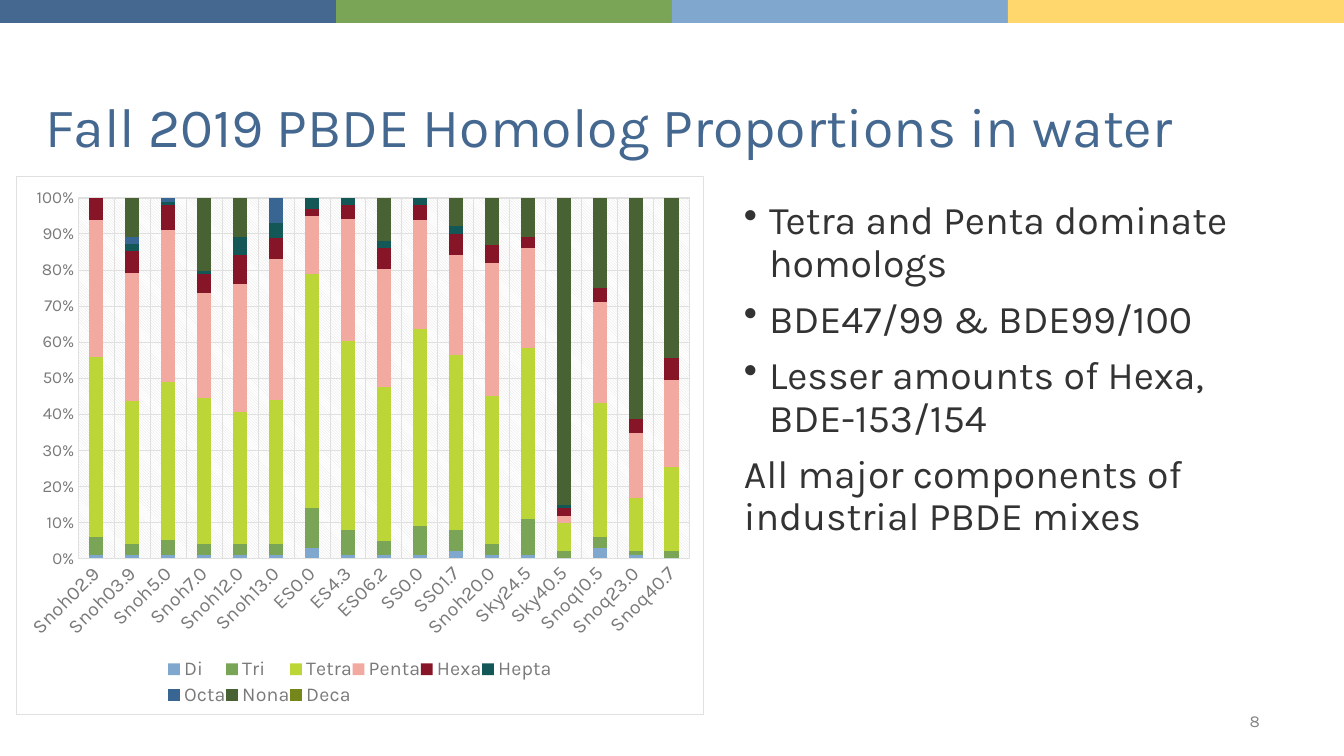
import dataclasses

import pptx
import pptx.chart.data
import pptx.dml.color
import pptx.enum.chart
import pptx.enum.shapes
import pptx.enum.text
import pptx.oxml
import pptx.oxml.ns
import pptx.util
from lxml import etree


@dataclasses.dataclass(frozen=True)
class Theme:
    font: str = "Karla"
    navy: str = "44688F"
    green: str = "7AA456"
    sky: str = "80A8CE"
    yellow: str = "FFD76D"
    white: str = "FFFFFF"
    text: str = "333333"
    axis: str = "7A7A7A"
    number: str = "858585"
    grid: str = "E0E0E0"
    title_size: float = 39.6
    body_size: int = 28
    label_size: int = 14
    small_size: int = 12


THEME = Theme()
EMU_PER_PX = 914400 / 100.8
WIDTH, HEIGHT = 1344, 756
ALIGN = pptx.enum.text.PP_ALIGN
ANCHOR = pptx.enum.text.MSO_ANCHOR

SITES = ["Snoh02.9", "Snoh03.9", "Snoh5.0", "Snoh7.0", "Snoh12.0", "Snoh13.0",
         "ES0.0", "ES4.3", "ES06.2", "SS0.0", "SS01.7", "Snoh20.0", "Sky24.5",
         "Sky40.5", "Snoq10.5", "Snoq23.0", "Snoq40.7"]
HOMOLOGS = [
    ("Di", THEME.sky, [1, 1, 1, 1, 1, 1, 3, 1, 1, 1, 2, 1, 1, 0, 3, 1, 0]),
    ("Tri", THEME.green, [5, 3, 4, 3, 3, 3, 11, 7, 4, 8, 6, 3, 10, 2, 3, 1, 2]),
    ("Tetra", "BCD637", [50, 40, 44, 40, 37, 40, 65, 53, 43, 54, 49, 41, 48, 8, 37, 15, 23]),
    ("Penta", "F2A9A0", [38, 36, 42, 29, 36, 39, 16, 34, 33, 30, 28, 37, 28, 2, 28, 18, 24]),
    ("Hexa", "861627", [6, 6, 7, 5, 8, 6, 2, 4, 6, 4, 6, 5, 3, 2, 4, 4, 6]),
    ("Hepta", "135756", [0, 2, 1, 1, 5, 4, 3, 2, 2, 2, 2, 0, 0, 1, 0, 0, 0]),
    ("Octa", "386591", [0, 2, 1, 0, 0, 7, 0, 0, 0, 0, 0, 0, 0, 0, 0, 0, 0]),
    ("Nona", "496234", [0, 11, 0, 20, 11, 0, 0, 0, 12, 0, 8, 13, 11, 86, 25, 62, 44]),
    ("Deca", "75861B", [0] * len(SITES)),
]
FINDINGS = [
    ("Tetra and Penta dominate homologs", True),
    ("BDE47/99 & BDE99/100", True),
    ("Lesser amounts of Hexa, BDE-153/154", True),
    ("All major components of industrial PBDE mixes", False),
]


def px(length):
    return pptx.util.Emu(round(length * EMU_PER_PX))


def rgb(code):
    return pptx.dml.color.RGBColor.from_string(code)


def apply(target, formats):
    for name, value in formats.items():
        setattr(target, name, value)


def style_font(font, size, color):
    apply(font, {"name": THEME.font, "size": pptx.util.Pt(size)})
    font.color.rgb = rgb(color)


def add_band(page, left, width, color):
    band = page.shapes.add_shape(pptx.enum.shapes.MSO_SHAPE.RECTANGLE,
                                 px(left), px(0), px(width), px(23))
    band.shadow.inherit = False
    band.fill.solid()
    band.fill.fore_color.rgb = rgb(color)
    band.line.fill.background()


def add_bullet(para):
    properties = para._p.get_or_add_pPr()
    properties.set("marL", "228600")
    properties.set("indent", "-228600")
    bullet = etree.SubElement(properties, pptx.oxml.ns.qn("a:buChar"))
    bullet.set("char", "•")


def add_text(page, area, lines, size, color, frame_formats=None, para_formats=None):
    """Add a text box; lines are pairs of wording and whether it has a bullet."""
    frame = page.shapes.add_textbox(*map(px, area)).text_frame
    apply(frame, {"word_wrap": True, **(frame_formats or {})})
    for index, (wording, bulleted) in enumerate(lines):
        para = frame.add_paragraph() if index else frame.paragraphs[0]
        if bulleted:
            add_bullet(para)
        apply(para, para_formats or {})
        if index:
            para.space_before = pptx.util.Pt(10)
        span = para.add_run()
        span.text = wording
        style_font(span.font, size, color)


def chart_xml(tag, content):
    return pptx.oxml.parse_xml(
        f'<c:{tag} {pptx.oxml.ns.nsdecls("c", "a")}>{content}</c:{tag}>')


def place(parent, index, x, y, width, height, inner=False):
    """Give a plot area or legend a fixed place, in fractions of the chart."""
    for old in parent.findall(pptx.oxml.ns.qn("c:layout")):
        parent.remove(old)
    target = '<c:layoutTarget val="inner"/>' if inner else ""
    parts = '<c:xMode val="edge"/><c:yMode val="edge"/>' + "".join(
        f'<c:{tag} val="{value}"/>'
        for tag, value in zip("xywh", (x, y, width, height)))
    parent.insert(index, chart_xml(
        "layout", f"<c:manualLayout>{target}{parts}</c:manualLayout>"))


def style_line(line):
    line.color.rgb = rgb(THEME.grid)
    line.width = pptx.util.Pt(0.75)


def style_axis(axis, size):
    no_tick = pptx.enum.chart.XL_TICK_MARK.NONE
    apply(axis, {"has_major_gridlines": True, "major_tick_mark": no_tick,
                 "minor_tick_mark": no_tick})
    style_font(axis.tick_labels.font, size, THEME.axis)
    style_line(axis.format.line)
    style_line(axis.major_gridlines.format.line)


def fill_backgrounds(chart):
    def solid(color):
        return f'<a:solidFill><a:srgbClr val="{color}"/></a:solidFill>'

    space = chart._chartSpace
    space.chart.addnext(chart_xml(
        "spPr", f'{solid(THEME.white)}<a:ln w="9525">{solid(THEME.grid)}</a:ln>'))
    space.chart.plotArea.append(chart_xml(
        "spPr", '<a:pattFill prst="ltDnDiag">'
        f'<a:fgClr><a:srgbClr val="{THEME.grid}"/></a:fgClr>'
        f'<a:bgClr><a:srgbClr val="{THEME.white}"/></a:bgClr></a:pattFill>'))


def add_homolog_chart(page, area):
    data = pptx.chart.data.CategoryChartData()
    data.categories = SITES
    for name, _, values in HOMOLOGS:
        data.add_series(name, values)
    kind = pptx.enum.chart.XL_CHART_TYPE.COLUMN_STACKED_100
    chart = page.shapes.add_chart(kind, *map(px, area), data).chart
    apply(chart, {"has_title": False, "has_legend": True})
    style_font(chart.font, 10, THEME.text)

    plot = chart.plots[0]
    apply(plot, {"gap_width": 150, "overlap": 100, "vary_by_categories": False})
    for series, (_, color, _) in zip(plot.series, HOMOLOGS):
        series.format.fill.solid()
        series.format.fill.fore_color.rgb = rgb(color)

    style_axis(chart.category_axis, THEME.label_size)
    style_axis(chart.value_axis, THEME.small_size)
    apply(chart.value_axis.tick_labels,
          {"number_format": "0%", "number_format_is_linked": False})
    label_body = chart.category_axis._element.find(".//" + pptx.oxml.ns.qn("a:bodyPr"))
    label_body.set("rot", "-2700000")

    apply(chart.legend, {"position": pptx.enum.chart.XL_LEGEND_POSITION.BOTTOM,
                         "include_in_layout": False})
    style_font(chart.legend.font, THEME.label_size, THEME.axis)
    place(chart._chartSpace.chart.plotArea, 0, 0.09, 0.04, 0.89, 0.67, inner=True)
    place(chart.legend._element, 1, 0.22, 0.89, 0.56, 0.1)
    fill_backgrounds(chart)


def main():
    deck = pptx.Presentation()
    apply(deck, {"slide_width": px(WIDTH), "slide_height": px(HEIGHT)})
    page = deck.slides.add_slide(deck.slide_layouts[6])

    bands = [THEME.navy, THEME.green, THEME.sky, THEME.yellow]
    band_width = WIDTH // len(bands)
    for index, color in enumerate(bands):
        add_band(page, index * band_width, band_width, color)

    add_text(page, (36, 96, 1202, 126),
             [("Fall 2019 PBDE Homolog Proportions in water", False)],
             THEME.title_size, THEME.navy,
             {"vertical_anchor": ANCHOR.BOTTOM, "margin_bottom": px(63)},
             {"line_spacing": 0.9})
    add_text(page, (734, 196, 536, 468), FINDINGS, THEME.body_size, THEME.text,
             para_formats={"line_spacing": 0.9})
    add_text(page, (968, 701, 302, 40), [("8", False)], THEME.small_size, THEME.number,
             {"vertical_anchor": ANCHOR.MIDDLE}, {"alignment": ALIGN.RIGHT})
    add_homolog_chart(page, (16, 176, 688, 539))
    deck.save("out.pptx")


if __name__ == "__main__":
    main()
